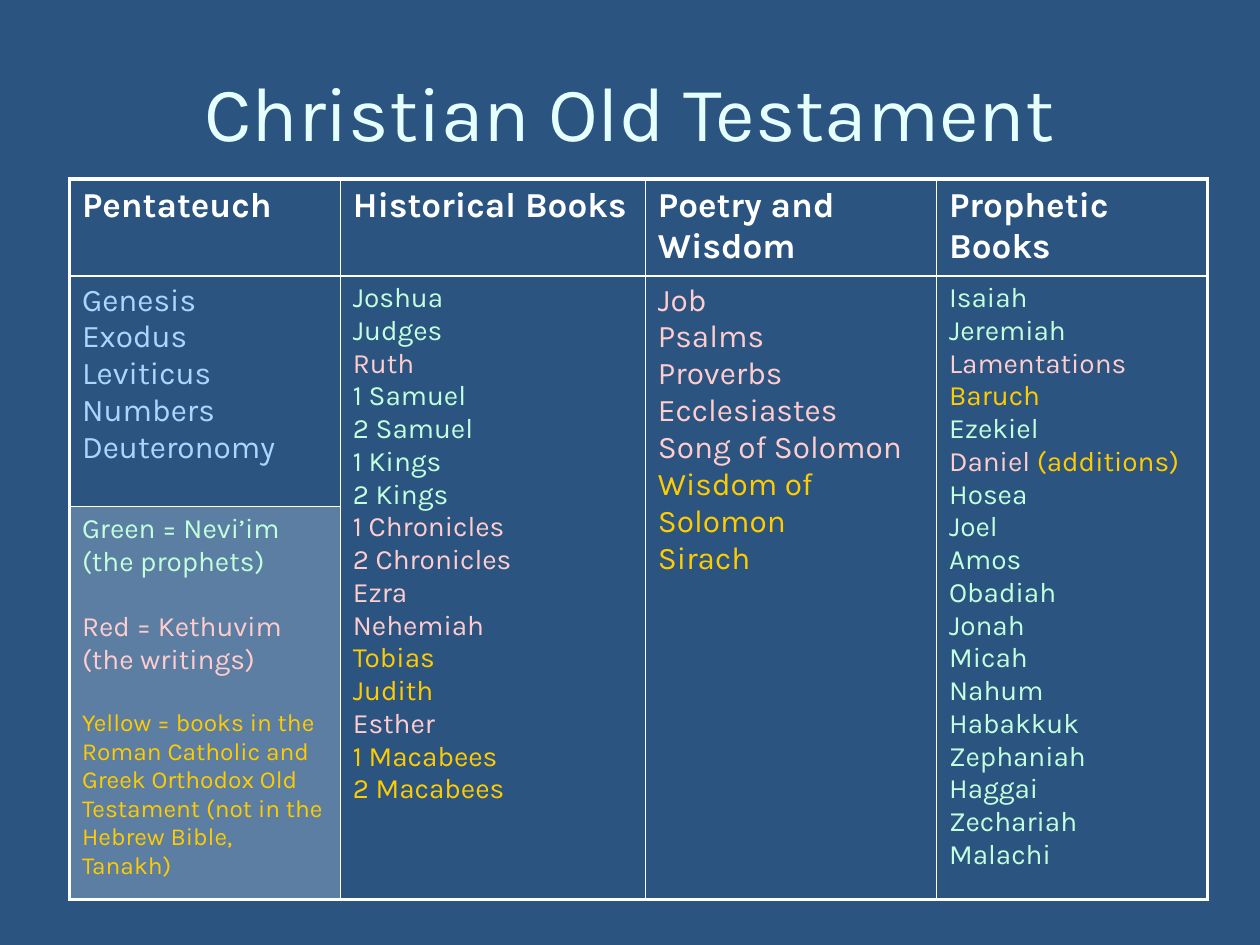
from dataclasses import dataclass
from typing import Optional

from lxml.etree import SubElement
from pptx import Presentation
from pptx.dml.color import RGBColor
from pptx.enum.text import MSO_ANCHOR, PP_ALIGN
from pptx.oxml.ns import qn
from pptx.util import Cm, Pt

FONT = "Karla"
COLORS = {
    "background": "2B5481",
    "title": "E5FFFF",
    "white": "FFFFFF",
    "torah": "ADD6FF",
    "prophets": "C1FFDD",
    "writings": "FFCDCD",
    "deuterocanon": "FFCC00",
    "legend": "CCDCEE",
}
COLUMN_WIDTHS = [5.46, 6.15, 5.87, 5.46]
ROW_HEIGHTS = [1.9, 4.65, 7.92]
OUTER_LINE, INNER_LINE = 2.25, 1
LEGEND_OPACITY = 31
NO_STYLE_ID = "{2D5ABB26-0587-4C30-8999-92F81FD0307C}"


@dataclass
class Line:
    """One paragraph: runs of (text, colour name)."""
    runs: list[tuple[str, str]]
    size: float
    space_before: float = 0
    bold: bool = False


def books(size: float, *groups: tuple[str, str]) -> list[Line]:
    """One line per book, from (colour name, comma-separated titles) groups."""
    return [Line([(title, color)], size)
            for color, titles in groups for title in titles.split(", ")]


HEADINGS = ["Pentateuch", "Historical Books", "Poetry and Wisdom", "Prophetic Books"]

PENTATEUCH = books(18, ("torah", "Genesis, Exodus, Leviticus, Numbers, Deuteronomy"))
HISTORICAL = books(
    16,
    ("prophets", "Joshua, Judges"),
    ("writings", "Ruth"),
    ("prophets", "1 Samuel, 2 Samuel, 1 Kings, 2 Kings"),
    ("writings", "1 Chronicles, 2 Chronicles, Ezra, Nehemiah"),
    ("deuterocanon", "Tobias, Judith"),
    ("writings", "Esther"),
    ("deuterocanon", "1 Macabees, 2 Macabees"),
)
POETRY = books(
    18,
    ("writings", "Job, Psalms, Proverbs, Ecclesiastes, Song of Solomon"),
    ("deuterocanon", "Wisdom of, Solomon, Sirach"),
)
PROPHETIC = [
    *books(16, ("prophets", "Isaiah, Jeremiah"), ("writings", "Lamentations"),
           ("deuterocanon", "Baruch"), ("prophets", "Ezekiel")),
    Line([("Daniel ", "writings"), ("(additions)", "deuterocanon")], 16),
    *books(16, ("prophets", "Hosea, Joel, Amos, Obadiah, Jonah, Micah, Nahum, "
                            "Habakkuk, Zephaniah, Haggai, Zechariah, Malachi")),
]
LEGEND = [
    Line([("Green = Nevi’im (the prophets)", "prophets")], 16),
    Line([("Red = Kethuvim (the writings)", "writings")], 16, 18.7),
    Line([("Yellow = books in the Roman Catholic and Greek Orthodox Old Testament "
           "(not in the Hebrew Bible, Tanakh)", "deuterocanon")], 14, 18.7),
]


def rgb(name: str) -> RGBColor:
    return RGBColor.from_string(COLORS[name])


def write_lines(text_frame, lines: list[Line], alignment=PP_ALIGN.LEFT) -> None:
    text_frame.word_wrap = True
    for index, line in enumerate(lines):
        paragraph = text_frame.add_paragraph() if index else text_frame.paragraphs[0]
        paragraph.alignment = alignment
        paragraph.space_before = Pt(line.space_before)
        for text, color in line.runs:
            run = paragraph.add_run()
            run.text = text
            run.font.name = FONT
            run.font.size = Pt(line.size)
            run.font.bold = line.bold
            run.font.color.rgb = rgb(color)


def draw_border(cell, side: str, width: Optional[float]) -> None:
    """Draw one side (L, R, T or B) of a cell; no width means no line."""
    properties = cell._tc.get_or_add_tcPr()
    border = SubElement(properties, qn(f"a:ln{side}"))
    if width is None:
        SubElement(border, qn("a:noFill"))
        return
    border.set("w", str(Pt(width)))
    fill = SubElement(border, qn("a:solidFill"))
    SubElement(fill, qn("a:srgbClr"), val=COLORS["white"])


def draw_grid(table) -> None:
    """Heavy frame, thin inner lines, none inside merged cells."""
    last_row, last_column = len(ROW_HEIGHTS) - 1, len(COLUMN_WIDTHS) - 1
    for row in range(last_row + 1):
        for column in range(last_column + 1):
            cell = table.cell(row, column)
            at_bottom = row == last_row or cell.is_merge_origin
            outer = {"L": column == 0, "R": column == last_column,
                     "T": row == 0, "B": at_bottom}
            for side, is_outer in outer.items():
                width = OUTER_LINE if is_outer else INNER_LINE
                if side == "T" and cell.is_spanned:
                    width = None
                draw_border(cell, side, width)
            cell.fill.background()


def add_title(slide) -> None:
    title = slide.shapes.add_textbox(Cm(0), Cm(1.07), Cm(25.4), Cm(2.34))
    title.text_frame.vertical_anchor = MSO_ANCHOR.MIDDLE
    write_lines(title.text_frame, [Line([("Christian Old Testament", "title")], 44)],
                PP_ALIGN.CENTER)


def add_books_table(slide) -> None:
    frame = slide.shapes.add_table(
        len(ROW_HEIGHTS), len(COLUMN_WIDTHS), Cm(1.4), Cm(3.61),
        Cm(sum(COLUMN_WIDTHS)), Cm(sum(ROW_HEIGHTS)))
    table = frame.table
    table.first_row = table.horz_banding = False
    table._tbl.tblPr.find(qn("a:tableStyleId")).text = NO_STYLE_ID
    for column, width in zip(table.columns, COLUMN_WIDTHS):
        column.width = Cm(width)
    for row, height in zip(table.rows, ROW_HEIGHTS):
        row.height = Cm(height)

    # Book lists beside the legend run over two rows
    for column in range(1, len(COLUMN_WIDTHS)):
        table.cell(1, column).merge(table.cell(2, column))
    draw_grid(table)

    # Headings and books
    lists = [PENTATEUCH, HISTORICAL, POETRY, PROPHETIC]
    for column, (heading, lines) in enumerate(zip(HEADINGS, lists)):
        write_lines(table.cell(0, column).text_frame,
                    [Line([(heading, "white")], 20, bold=True)])
        write_lines(table.cell(1, column).text_frame, lines)

    # Colour legend on a translucent fill
    legend = table.cell(2, 0)
    write_lines(legend.text_frame, LEGEND)
    legend.fill.solid()
    legend.fill.fore_color.rgb = rgb("legend")
    color = legend._tc.tcPr.find(qn("a:solidFill")).find(qn("a:srgbClr"))
    SubElement(color, qn("a:alpha"), val=str(LEGEND_OPACITY * 1000))


def main() -> None:
    presentation = Presentation()
    presentation.slide_width, presentation.slide_height = Cm(25.4), Cm(19.05)
    slide = presentation.slides.add_slide(presentation.slide_layouts[6])
    slide.background.fill.solid()
    slide.background.fill.fore_color.rgb = rgb("background")
    add_title(slide)
    add_books_table(slide)
    presentation.save("out.pptx")


if __name__ == "__main__":
    main()
